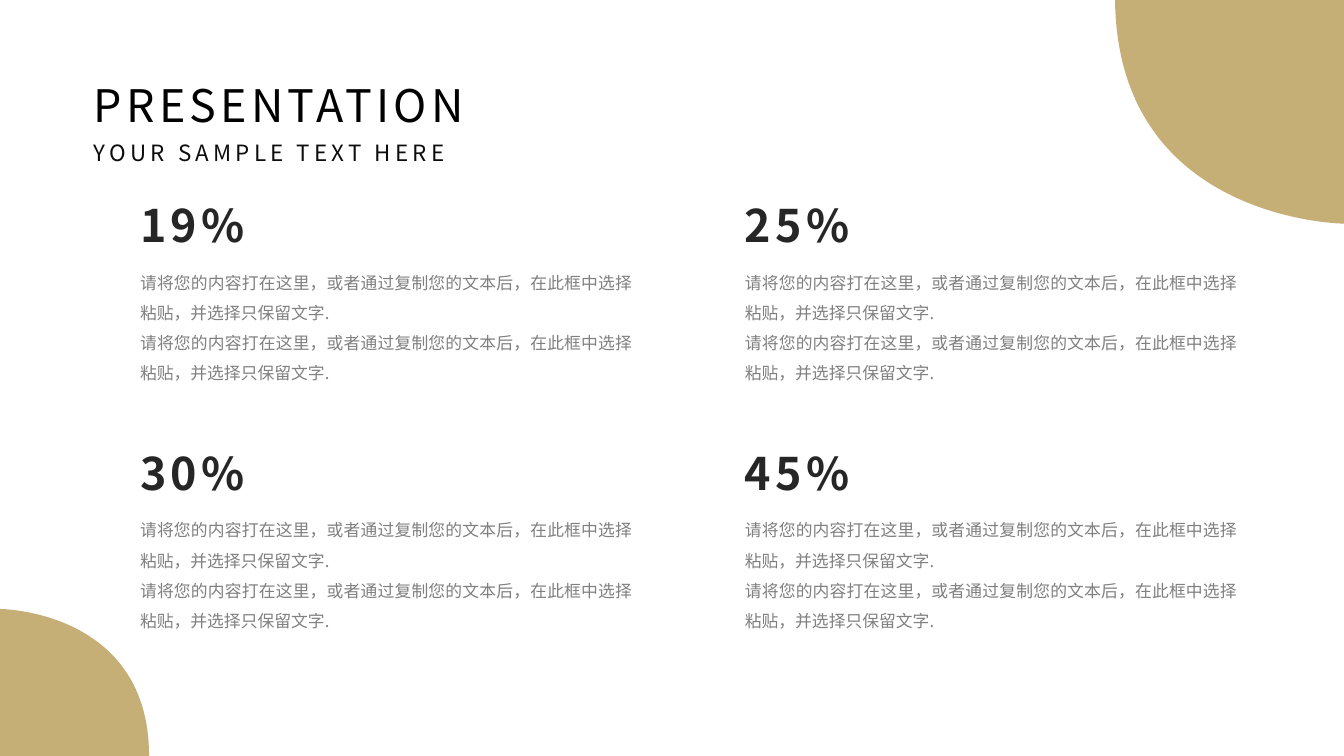
from dataclasses import dataclass

from lxml.etree import SubElement
from pptx import Presentation
from pptx.dml.color import RGBColor
from pptx.enum.text import MSO_AUTO_SIZE as AutoSize, PP_ALIGN as Align
from pptx.oxml.ns import qn
from pptx.slide import Slide
from pptx.util import Pt

PX = 9525
FONT = "Noto Sans CJK SC"
GOLD = RGBColor(0xC5, 0xAF, 0x76)
BLACK = RGBColor(0x00, 0x00, 0x00)
NEAR_BLACK = RGBColor(0x0D, 0x0D, 0x0D)
CHARCOAL = RGBColor(0x26, 0x26, 0x26)
GRAY = RGBColor(0x80, 0x80, 0x80)

SENTENCE = "请将您的内容打在这里，或者通过复制您的文本后，在此框中选择粘贴，并选择只保留文字."
PERCENTAGES = (("19%", "25%"), ("30%", "45%"))
GRID_LEFT, GRID_TOP = 124, 184
COLUMN_STEP, ROW_STEP = 576, 236
BODY_OFFSET = 61
CURVE_STEPS = 60

Point = tuple[int, int]


@dataclass(frozen=True)
class TextStyle:
    size: int
    color: RGBColor
    bold: bool = False
    spacing: int = 0
    paragraph: bool = False


@dataclass(frozen=True)
class TextBlock:
    text: str
    left: int
    top: int
    width: int
    height: int
    style: TextStyle


@dataclass(frozen=True)
class Corner:
    start: Point
    control: Point
    end: Point
    tip: Point


TITLE_STYLE = TextStyle(32, BLACK, spacing=3)
SUBTITLE_STYLE = TextStyle(16, NEAR_BLACK, spacing=3)
PERCENT_STYLE = TextStyle(32, CHARCOAL, bold=True, spacing=3)
BODY_STYLE = TextStyle(12, GRAY, paragraph=True)

HEADINGS = (
    TextBlock("PRESENTATION", 80, 69, 386, 61, TITLE_STYLE),
    TextBlock("YOUR SAMPLE TEXT HERE", 80, 128, 373, 36, SUBTITLE_STYLE),
)
CORNERS = (
    Corner((1280, 213), (1062, 211), (1062, -3), (1280, -3)),
    Corner((0, 580), (142, 581), (142, 720), (0, 720)),
)


def add_text(slide: Slide, block: TextBlock) -> None:
    """Add a text block in its own style."""
    style = block.style
    box = slide.shapes.add_textbox(
        block.left * PX, block.top * PX, block.width * PX, block.height * PX
    )
    frame = box.text_frame
    frame.text = block.text
    frame.word_wrap = style.paragraph
    frame.auto_size = AutoSize.SHAPE_TO_FIT_TEXT
    for paragraph in frame.paragraphs:
        if style.paragraph:
            paragraph.alignment = Align.JUSTIFY
            paragraph.line_spacing = 1.5
        for run in paragraph.runs:
            run.font.size = Pt(style.size)
            run.font.bold = style.bold
            run.font.color.rgb = style.color
            run.font.name = FONT
            properties = run._r.get_or_add_rPr()
            SubElement(properties, qn("a:ea")).set("typeface", FONT)
            if style.spacing:
                properties.set("spc", str(style.spacing * 100))


def curve_point(corner: Corner, t: float) -> Point:
    """Return the point at t, in EMU, on the curve that leaves from a doubled start."""
    weights = ((1 - t) ** 3 + 3 * (1 - t) ** 2 * t, 3 * (1 - t) * t**2, t**3)
    anchors = (corner.start, corner.control, corner.end)
    x, y = (
        round(PX * sum(w * anchor[axis] for w, anchor in zip(weights, anchors)))
        for axis in (0, 1)
    )
    return x, y


def add_corner(slide: Slide, corner: Corner) -> None:
    """Add a gold corner bounded by a curve."""
    first, *rest = [curve_point(corner, i / CURVE_STEPS) for i in range(CURVE_STEPS + 1)]
    tip_x, tip_y = corner.tip
    builder = slide.shapes.build_freeform(*first)
    builder.add_line_segments([*rest, (tip_x * PX, tip_y * PX)], close=True)
    shape = builder.convert_to_shape()
    shape.shadow.inherit = False
    shape.fill.solid()
    shape.fill.fore_color.rgb = GOLD
    shape.line.fill.background()


def add_statistic(slide: Slide, percentage: str, left: int, top: int) -> None:
    """Add a percentage with its explanation below."""
    explanation = "\n".join([SENTENCE] * 2)
    add_text(slide, TextBlock(percentage, left, top, 125, 61, PERCENT_STYLE))
    add_text(slide, TextBlock(explanation, left, top + BODY_OFFSET, 488, 126, BODY_STYLE))


def main() -> None:
    """Build and save the slide."""
    presentation = Presentation()
    presentation.slide_width = 1280 * PX
    presentation.slide_height = 720 * PX
    slide = presentation.slides.add_slide(presentation.slide_layouts[6])
    for row, percentages in enumerate(PERCENTAGES):
        for column, percentage in enumerate(percentages):
            add_statistic(
                slide,
                percentage,
                GRID_LEFT + column * COLUMN_STEP,
                GRID_TOP + row * ROW_STEP,
            )
    for heading in HEADINGS:
        add_text(slide, heading)
    for corner in CORNERS:
        add_corner(slide, corner)
    presentation.save("out.pptx")


if __name__ == "__main__":
    main()
